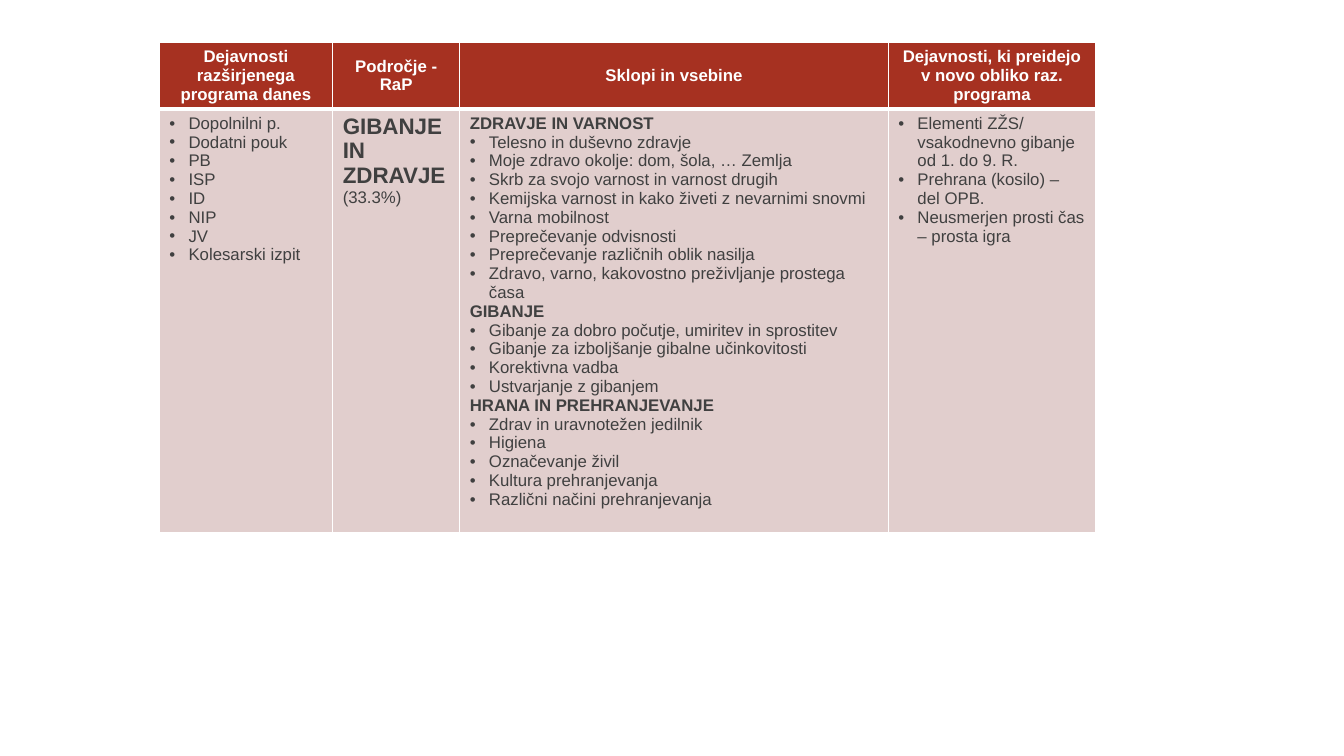
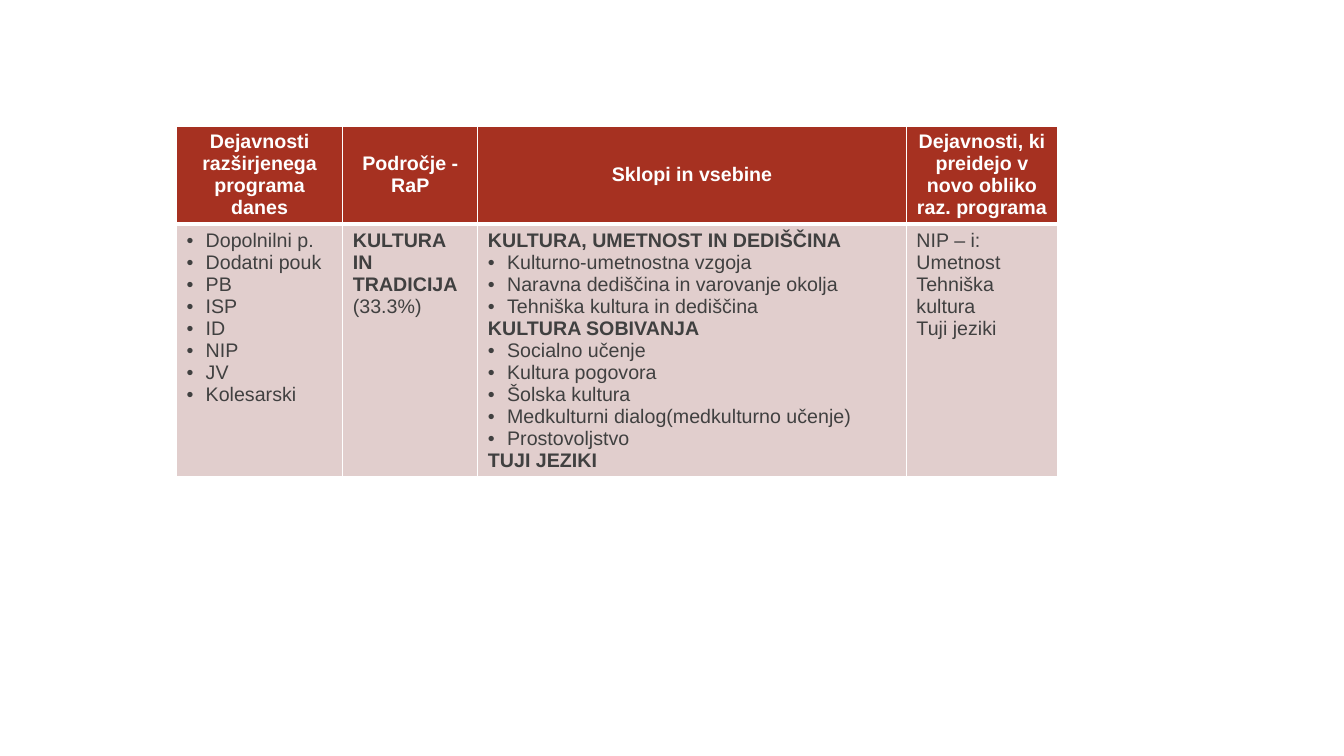
import pptx
import pptx.dml.color
import pptx.enum.text
import pptx.oxml
import pptx.oxml.ns
import pptx.util
from pptx.util import Inches

THEME = {
    "font": "Arial",
    "header_fill": "A63121",
    "body_fill": "E1CECD",
    "header_text": "FFFFFF",
    "body_text": "404040",
    "border": "FFFFFF",
    "thin": 1,
    "thick": 3,
    "small": 12,
    "medium": 14,
    "large": 16,
    "indent": Inches(0.19),
}

HEADERS = [
    "Dejavnosti razširjenega programa danes",
    "Področje - RaP",
    "Sklopi in vsebine",
    "Dejavnosti, ki preidejo v novo obliko raz. programa",
]
CURRENT_ACTIVITIES = ["Dopolnilni p.", "Dodatni pouk", "PB", "ISP", "ID", "NIP", "JV"]

TABLES = [
    {
        "left": 1.58, "top": 0.42,
        "columns": [1.72, 1.26, 4.25, 2.06],
        "rows": [0.65, 4.2],
        "size": THEME["small"],
        "area_size": THEME["large"],
        "body": [
            [("bullet", CURRENT_ACTIVITIES + ["Kolesarski izpit"])],
            [("area", ["GIBANJE IN ZDRAVJE"]), ("plain", ["(33.3%)"])],
            [
                ("heading", ["ZDRAVJE IN VARNOST"]),
                ("bullet", [
                    "Telesno in duševno zdravje",
                    "Moje zdravo okolje: dom, šola, … Zemlja",
                    "Skrb za svojo varnost in varnost drugih",
                    "Kemijska varnost in kako živeti z nevarnimi snovmi",
                    "Varna mobilnost",
                    "Preprečevanje odvisnosti",
                    "Preprečevanje različnih oblik nasilja",
                    "Zdravo, varno, kakovostno preživljanje prostega časa",
                ]),
                ("heading", ["GIBANJE"]),
                ("bullet", [
                    "Gibanje za dobro počutje, umiritev in sprostitev",
                    "Gibanje za izboljšanje gibalne učinkovitosti",
                    "Korektivna vadba",
                    "Ustvarjanje z gibanjem",
                ]),
                ("heading", ["HRANA IN PREHRANJEVANJE"]),
                ("bullet", [
                    "Zdrav in uravnotežen jedilnik",
                    "Higiena",
                    "Označevanje živil",
                    "Kultura prehranjevanja",
                    "Različni načini prehranjevanja",
                ]),
            ],
            [("bullet", [
                "Elementi ZŽS/ vsakodnevno gibanje od 1. do 9. R.",
                "Prehrana (kosilo) – del OPB.",
                "Neusmerjen prosti čas – prosta igra",
            ])],
        ],
    },
    {
        "left": 1.75, "top": 1.25,
        "columns": [1.65, 1.34, 4.25, 1.5],
        "rows": [0.97, 2.5],
        "size": THEME["medium"],
        "area_size": THEME["medium"],
        "body": [
            [("bullet", CURRENT_ACTIVITIES + ["Kolesarski"])],
            [("area", ["KULTURA IN TRADICIJA"]), ("plain", ["(33.3%)"])],
            [
                ("heading", ["KULTURA, UMETNOST IN DEDIŠČINA"]),
                ("bullet", [
                    "Kulturno-umetnostna vzgoja",
                    "Naravna dediščina in varovanje okolja",
                    "Tehniška kultura in dediščina",
                ]),
                ("heading", ["KULTURA SOBIVANJA"]),
                ("bullet", [
                    "Socialno učenje",
                    "Kultura pogovora",
                    "Šolska kultura",
                    "Medkulturni dialog(medkulturno učenje)",
                    "Prostovoljstvo",
                ]),
                ("heading", ["TUJI JEZIKI"]),
            ],
            [("plain", ["NIP – i:", "Umetnost", "Tehniška kultura", "Tuji jeziki"])],
        ],
    },
]


def write_paragraph(paragraph, text, size, color, bold=False, bullet=False, align=None):
    if bullet:
        properties = paragraph._p.get_or_add_pPr()
        properties.set("marL", str(THEME["indent"]))
        properties.set("indent", str(-THEME["indent"]))
        namespace = pptx.oxml.ns.nsdecls("a")
        properties.append(pptx.oxml.parse_xml(f'<a:buFont {namespace} typeface="{THEME["font"]}"/>'))
        properties.append(pptx.oxml.parse_xml(f'<a:buChar {namespace} char="•"/>'))
    paragraph.alignment = align
    run = paragraph.add_run()
    run.text = text
    run.font.name = THEME["font"]
    run.font.size = pptx.util.Pt(size)
    run.font.bold = bold
    run.font.color.rgb = pptx.dml.color.RGBColor.from_string(color)


def style_cell(cell, fill, top, bottom):
    properties = cell._tc.get_or_add_tcPr()
    widths = {"lnL": THEME["thin"], "lnR": THEME["thin"], "lnT": top, "lnB": bottom}
    for side, width in widths.items():
        properties.append(pptx.oxml.parse_xml(
            f'<a:{side} {pptx.oxml.ns.nsdecls("a")} w="{pptx.util.Pt(width)}">'
            f'<a:solidFill><a:srgbClr val="{THEME["border"]}"/></a:solidFill></a:{side}>'
        ))
    cell.fill.solid()
    cell.fill.fore_color.rgb = pptx.dml.color.RGBColor.from_string(fill)


presentation = pptx.Presentation()
presentation.slide_width = Inches(13.33)
presentation.slide_height = Inches(7.5)

for content in TABLES:
    slide = presentation.slides.add_slide(presentation.slide_layouts[6])
    table = slide.shapes.add_table(
        len(content["rows"]), len(content["columns"]),
        Inches(content["left"]), Inches(content["top"]),
        Inches(sum(content["columns"])), Inches(sum(content["rows"])),
    ).table
    table.horz_banding = False
    for row, height in zip(table.rows, content["rows"]):
        row.height = Inches(height)

    for index, width in enumerate(content["columns"]):
        table.columns[index].width = Inches(width)

        header = table.cell(0, index)
        style_cell(header, THEME["header_fill"], THEME["thin"], THEME["thick"])
        header.vertical_anchor = pptx.enum.text.MSO_ANCHOR.MIDDLE
        write_paragraph(
            header.text_frame.paragraphs[0], HEADERS[index], content["size"],
            THEME["header_text"], bold=True, align=pptx.enum.text.PP_ALIGN.CENTER,
        )

        body = table.cell(1, index)
        style_cell(body, THEME["body_fill"], THEME["thick"], THEME["thin"])
        lines = [(kind, text) for kind, texts in content["body"][index] for text in texts]
        for position, (kind, text) in enumerate(lines):
            frame = body.text_frame
            paragraph = frame.add_paragraph() if position else frame.paragraphs[0]
            write_paragraph(
                paragraph, text,
                content["area_size"] if kind == "area" else content["size"],
                THEME["body_text"], bold=kind in ("area", "heading"), bullet=kind == "bullet",
            )

presentation.save("out.pptx")
